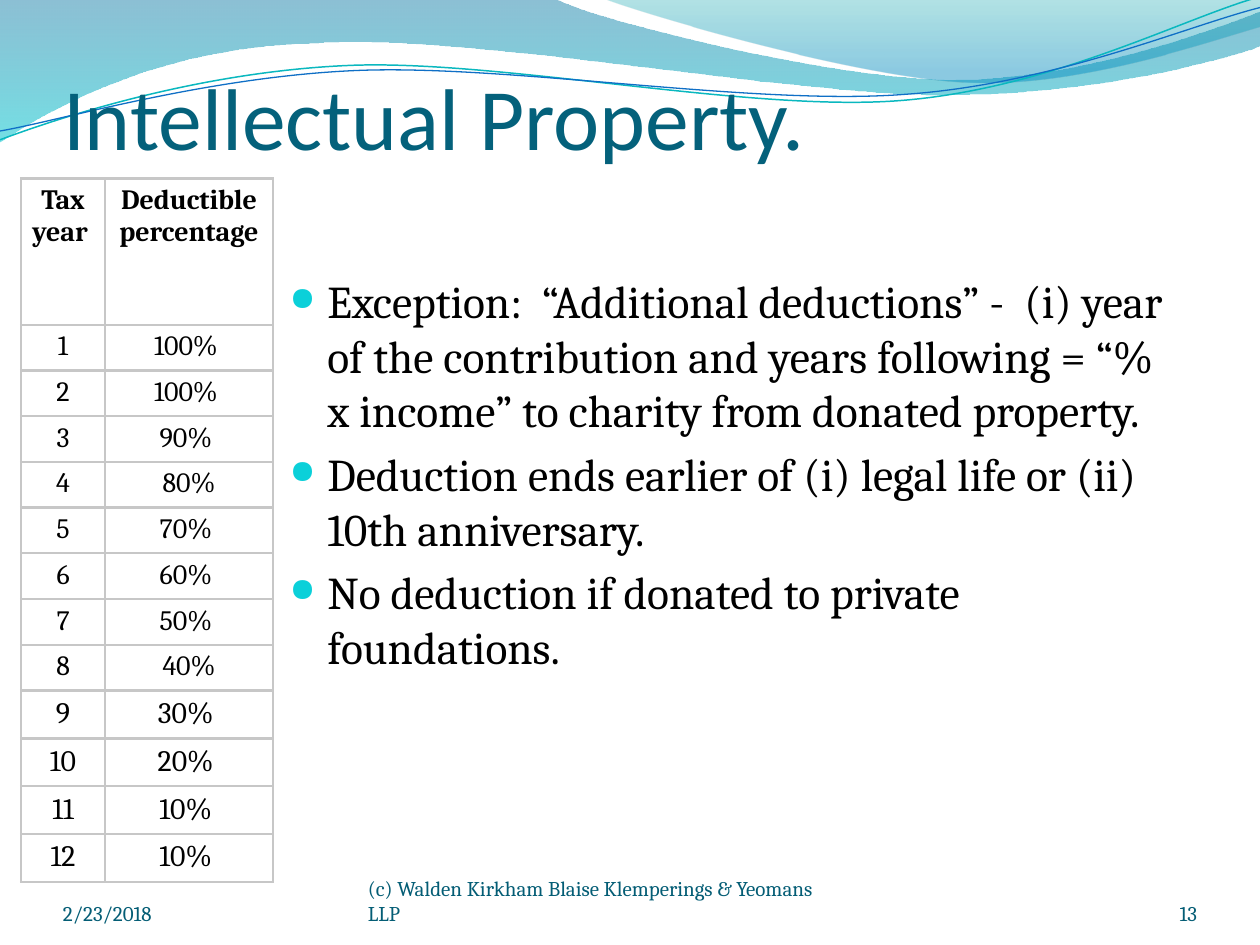
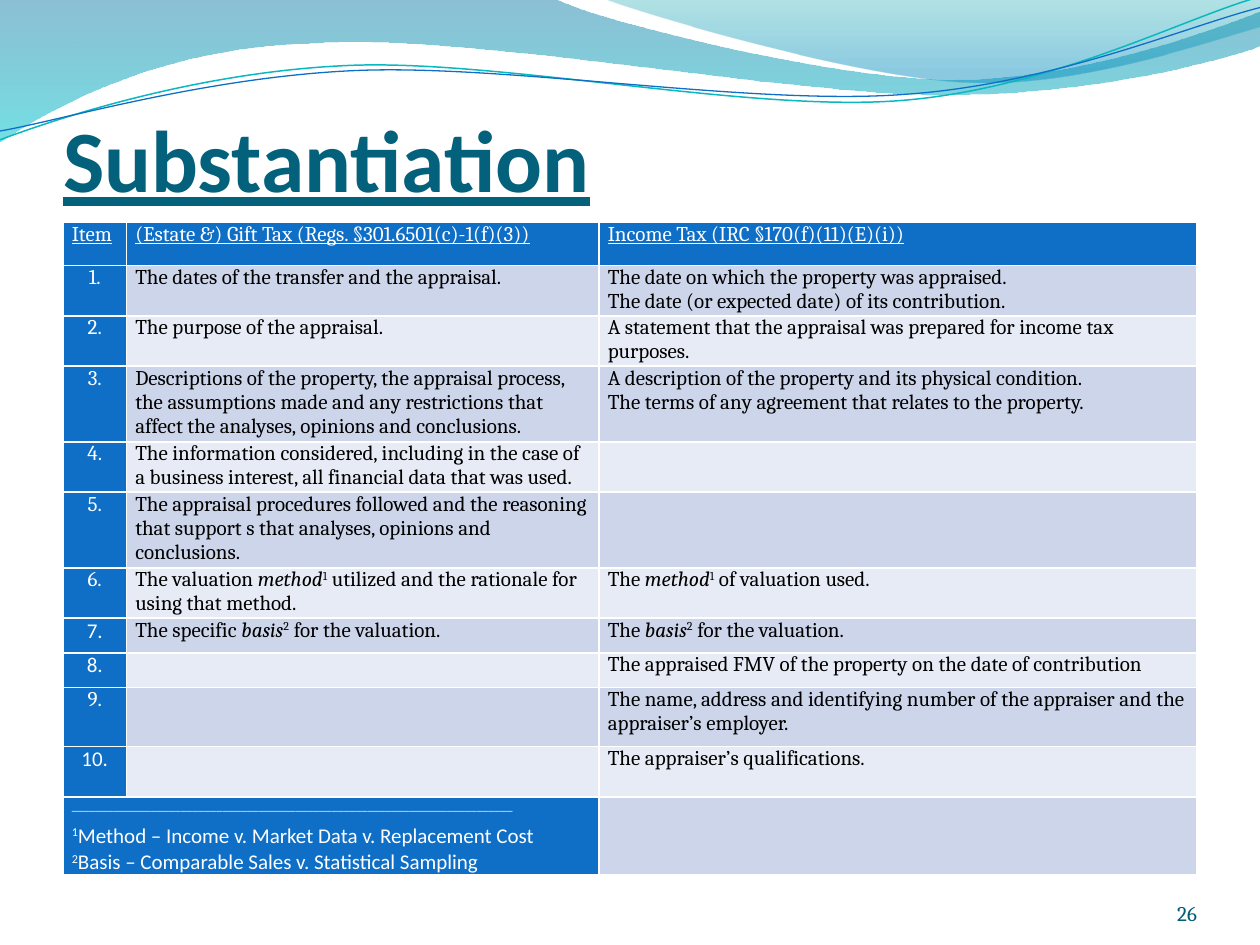
from dataclasses import dataclass, replace
from typing import NamedTuple

from lxml.etree import SubElement
from pptx import Presentation
from pptx.dml.color import RGBColor
from pptx.enum.text import MSO_ANCHOR as Anchor, MSO_AUTO_SIZE as AutoSize, PP_ALIGN as Align
from pptx.oxml import parse_xml
from pptx.oxml.ns import nsdecls, qn
from pptx.util import Emu, Inches, Pt

COLUMNS, ROWS = 100, 75
WIDTH, HEIGHT = Inches(10), Inches(7.5)
HEADING, BODY = "Calibri", "Cambria"
BLUE, BLACK, WHITE, GREY = "0F6FC6", "000000", "FFFFFF", "C7C7C7"
BANDS = ("E7EBF5", "CCD5EA")


@dataclass(frozen=True)
class Style:
    size: float
    color: str = BLACK
    font: str = BODY
    bold: bool = False
    underline: bool = False


class Box(NamedTuple):
    left: float
    top: float
    width: float
    height: float


class Span(NamedTuple):
    text: str
    italic: bool = False
    raised: bool = False


class Stop(NamedTuple):
    place: int
    color: str
    opacity: int


class Wave(NamedTuple):
    start: tuple
    segments: tuple
    stops: tuple = ()
    color: str = ""
    weight: float = 0


TITLE = Style(50, "04617B", HEADING)
FOOTER = Style(12, "045D75")
SMALL = Style(12)
LIGHT = Style(12, WHITE)
LIGHT_SANS = Style(12, WHITE, HEADING)

WAVES = (
    Wave((0, 0), (
        (44, -0.1), (47.6, 1.7, 66.4, 6.3, 75.8, 6.3), (85.3, 6.3, 95.8, 2.6, 100, 0.9),
        (100.1, 3.6), (98.3, 4.4, 87, 7.6, 74.6, 7.5), (62.2, 7.5, 38.2, 2.8, 25.7, 3.4),
        (12.9, 3.6, 4.6, 8.3, -0.1, 11.3), (0, 0)),
        stops=(Stop(0, "0074A1", 45), Stop(100, "00C6CF", 55))),
    Wave((47.9, -0.1), (
        (50.9, 1.1, 68.2, 6.2, 76.9, 6.5), (85.6, 6.9, 96.1, 3.2, 100, 2.1), (100, 0),
        (47.9, -0.1)),
        stops=(Stop(0, "00A1A9", 30), Stop(80, "008BBF", 45))),
    Wave((0, 11.1), (
        (4.8, 9.3, 15.8, 5.7, 27.7, 5.2), (39.5, 4.7, 59.3, 8.9, 71.3, 8),
        (83.3, 7.1, 93.8, 1.5, 99.8, -0.2)), color="0AB8BF", weight=0.85),
    Wave((0, 10.4), (
        (4.7, 9.6, 16.4, 6.1, 28.3, 5.6), (40.3, 5.1, 59.7, 8.4, 71.7, 7.5),
        (83.6, 6.7, 94.1, 2.1, 100, 0.6)), color=BLUE, weight=0.75),
)

DATE_BOX = Box(5, 69.5, 23.3, 4)
FIRM_BOX = Box(29.2, 69.5, 36.7, 4)
NUMBER_BOX = Box(86.7, 69.5, 8.3, 4)

DEDUCTIONS = ("100% ", "100% ", "90% ", "80%", "70% ", "60% ",
              "50% ", "40%", "30% ", "20% ", "10% ", "10% ")
EXCEPTIONS = (
    "Exception:  “Additional deductions” -  (i) year of the contribution and years following"
    " = “% x income” to charity from donated property.",
    "Deduction ends earlier of (i) legal life or (ii) 10th anniversary.",
    "No deduction if donated to private foundations.",
)

METHOD, BASIS = Span("method", italic=True), Span("basis", italic=True)
ONE, TWO = Span("1", raised=True), Span("2", raised=True)
ITEM_HEADS = ("Item", "(Estate &) Gift Tax (Regs. §301.6501(c)-1(f)(3))",
              "Income Tax (IRC §170(f)(11)(E)(i))")
REQUIREMENTS = (
    (["The dates of the transfer and the appraisal."],
     ["The date on which the property was appraised.",
      "The date (or expected date) of its contribution."]),
    (["The purpose of the appraisal."],
     ["A statement that the appraisal was prepared for income tax purposes."]),
    (["Descriptions of the property, the appraisal process, the assumptions made and any"
      " restrictions that affect the analyses, opinions and conclusions."],
     ["A description of the property and its physical condition.",
      "The terms of any agreement that relates to the property."]),
    (["The information considered, including in the case of a business interest, all financial"
      " data that was used."], []),
    (["The appraisal procedures followed and the reasoning that support s that analyses,"
      " opinions and conclusions."], []),
    ([("The valuation ", METHOD, ONE, " utilized and the rationale for using that method.")],
     [("The ", METHOD, ONE, " of valuation used.")]),
    ([("The specific ", BASIS, TWO, " for the valuation.")],
     [("The ", BASIS, TWO, " for the valuation.")]),
    ([], ["The appraised FMV of the property on the date of contribution"]),
    ([], ["The name, address and identifying number of the appraiser and the appraiser’s"
          " employer."]),
    ([], ["The appraiser’s qualifications."]),
)
SANS_ITEMS = (7, 8, 10)
FOOTNOTES = [
    (Span("_" * 73, raised=True),),
    (ONE, "Method – Income v. Market Data v. Replacement Cost"),
    (TWO, "Basis – Comparable Sales v. Statistical Sampling"),
]


def across(columns: float) -> Emu:
    return Emu(round(WIDTH * columns / COLUMNS))


def down(rows: float) -> Emu:
    return Emu(round(HEIGHT * rows / ROWS))


def place(box: Box) -> tuple:
    return across(box.left), down(box.top), across(box.width), down(box.height)


def rgb(color: str) -> RGBColor:
    return RGBColor.from_string(color)


def format_run(run, style: Style) -> None:
    font = run.font
    font.name, font.size, font.bold = style.font, Pt(style.size), style.bold
    font.underline = style.underline
    font.color.rgb = rgb(style.color)


def write(frame, paragraphs, style: Style, align=Align.LEFT) -> None:
    for index, content in enumerate(paragraphs):
        para = frame.add_paragraph() if index else frame.paragraphs[0]
        para.alignment = align
        for part in (content,) if isinstance(content, str) else content:
            span = Span(part) if isinstance(part, str) else part
            run = para.add_run()
            run.text = span.text
            format_run(run, style)
            run.font.italic = span.italic
            if span.raised:
                run.font._element.set("baseline", "30000")


def set_margins(holder, left: float, top: float, right: float, bottom: float) -> None:
    holder.margin_left, holder.margin_right = across(left), across(right)
    holder.margin_top, holder.margin_bottom = down(top), down(bottom)


def add_title(page, text: str, box: Box, style: Style) -> None:
    title = page.shapes.title
    title.left, title.top, title.width, title.height = place(box)
    frame = title.text_frame
    frame.auto_size, frame.vertical_anchor = AutoSize.NONE, Anchor.BOTTOM
    set_margins(frame, 0, 0.5, 0, 0)
    write(frame, [text], style)


def add_footer(page, text: str, box: Box, align=Align.LEFT) -> None:
    frame = page.shapes.add_textbox(*place(box)).text_frame
    frame.word_wrap, frame.vertical_anchor = True, Anchor.BOTTOM
    set_margins(frame, 0, 0, 0, 0)
    write(frame, [text], FOOTER, align)


def bend_segments(shape, segments: tuple) -> None:
    lines = iter(list(shape._element.iter(qn("a:lnTo"))))
    for segment in segments:
        first = next(lines)
        if len(segment) == 6:
            first.tag = qn("a:cubicBezTo")
            for _ in range(2):
                spare = next(lines)
                first.append(spare[0])
                spare.getparent().remove(spare)


def gradient(stops: tuple):
    marks = "".join(
        f'<a:gs pos="{stop.place * 1000}"><a:srgbClr val="{stop.color}">'
        f'<a:alpha val="{stop.opacity * 1000}"/></a:srgbClr></a:gs>' for stop in stops)
    return parse_xml(f'<a:gradFill {nsdecls("a")} rotWithShape="1"><a:gsLst>{marks}</a:gsLst>'
                     '<a:lin ang="5400000" scaled="0"/></a:gradFill>')


def add_waves_to_layout(page) -> None:
    for number, wave in enumerate(WAVES):
        knots = [(across(x), down(y)) for segment in wave.segments
                 for x, y in zip(segment[::2], segment[1::2])]
        builder = page.shapes.build_freeform(across(wave.start[0]), down(wave.start[1]))
        builder.add_line_segments(knots, close=bool(wave.stops))
        shape = builder.convert_to_shape()
        bend_segments(shape, wave.segments)
        shape.shadow.inherit = False
        shape.fill.background()
        if wave.stops:
            shape.line.fill.background()
            properties = shape._element.spPr
            properties.replace(properties.find(qn("a:noFill")), gradient(wave.stops))
        else:
            shape.line.color.rgb = rgb(wave.color)
            shape.line.width = Pt(wave.weight)
        shape._element.nvSpPr.cNvPr.set("id", str(100 + number))
        page.slide_layout.shapes._spTree.append(shape._element)


def add_grid(page, box: Box, widths: list, heights: list, border: str, weight: float):
    frame = page.shapes.add_table(len(heights), len(widths), *place(box))
    table = frame.table
    table.first_row = table.horz_banding = False
    for column, width in zip(table.columns, widths):
        column.width = across(width)
    for row, height in zip(table.rows, heights):
        row.height = down(height)
    for cell in table.iter_cells():
        for side in ("lnL", "lnR", "lnT", "lnB"):
            line = SubElement(cell._tc.get_or_add_tcPr(), qn(f"a:{side}"), w=str(Pt(weight)))
            SubElement(SubElement(line, qn("a:solidFill")), qn("a:srgbClr"), val=border)
    return table


def fill_cell(cell, paragraphs, style: Style, align=Align.LEFT, fill: str = "",
              margins=(0.7, 0, 0.7, 0)) -> None:
    set_margins(cell, *margins)
    if fill:
        cell.fill.solid()
        cell.fill.fore_color.rgb = rgb(fill)
    else:
        cell.fill.background()
    write(cell.text_frame, paragraphs, style, align)
    if not paragraphs:
        mark = cell.text_frame.paragraphs[0]._p.get_or_add_endParaRPr()
        mark.set("sz", str(round(style.size * 100)))


def add_bullets(page, box: Box, texts: tuple, style: Style) -> None:
    frame = page.shapes.add_textbox(*place(box)).text_frame
    frame.word_wrap = True
    write(frame, texts, style)
    for para in frame.paragraphs:
        para.space_before = Pt(style.size * 0.2)
        properties = para._p.get_or_add_pPr()
        properties.set("marL", str(across(20)))
        properties.set("indent", str(-across(3)))
        color = SubElement(properties, qn("a:buClr"))
        SubElement(color, qn("a:srgbClr"), val="0BD0D9")
        SubElement(properties, qn("a:buSzPct"), val="72000")
        SubElement(properties, qn("a:buChar"), char="●")


def build_intellectual_property(page) -> None:
    add_title(page, "Intellectual Property.", Box(5, 3.3, 90, 10), TITLE)
    add_bullets(page, Box(5, 21.2, 90, 48), EXCEPTIONS, Style(26))
    add_footer(page, "2/23/2018", DATE_BOX)
    add_footer(page, "(c) Walden Kirkham Blaise Klemperings & Yeomans LLP", FIRM_BOX)
    add_footer(page, "13", NUMBER_BOX, Align.RIGHT)
    heights = [11.6] + [3.63] * 8 + [3.8] * 4
    table = add_grid(page, Box(1.67, 14.17, 20, 56), [6.67, 13.33], heights, GREY, 1.5)
    rows = [("Tax year ", "Deductible percentage")]
    rows += [(str(year), share) for year, share in enumerate(DEDUCTIONS, 1)]
    for index, row in enumerate(rows):
        style = Style(17 if index > 8 else 16, bold=index == 0)
        for column, text in enumerate(row):
            fill_cell(table.cell(index, column), [text], style, Align.CENTER,
                      margins=(0.48, 0.47, 0.48, 0.47))


def build_substantiation(page) -> None:
    add_title(page, "Substantiation", Box(5, 7.7, 90, 9),
              replace(TITLE, bold=True, underline=True))
    heights = [3.4, 4, 4, 6, 4, 6, 4, 2.75, 2.75, 4.7, 4, 5.5]
    table = add_grid(page, Box(5, 17.67, 90, 55.8), [5.04, 37.5, 47.46], heights, WHITE, 1)
    for column, head in enumerate(ITEM_HEADS):
        cell = table.cell(0, column)
        fill_cell(cell, [head], replace(LIGHT, underline=True), fill=BLUE)
        cell.text_frame.paragraphs[0].space_after = Pt(6)
    for item, texts in enumerate(REQUIREMENTS, 1):
        number_style = LIGHT_SANS if item in SANS_ITEMS else LIGHT
        fill_cell(table.cell(item, 0), [f"{item}."], number_style, Align.CENTER, BLUE)
        for column, paragraphs in enumerate(texts, 1):
            fill_cell(table.cell(item, column), paragraphs, SMALL, fill=BANDS[item % 2])
    last = len(heights) - 1
    notes = table.cell(last, 0)
    notes.merge(table.cell(last, 1))
    fill_cell(notes, FOOTNOTES, LIGHT_SANS, fill=BLUE)
    for para in notes.text_frame.paragraphs:
        para.space_before = Pt(3)
    for para in notes.text_frame.paragraphs[1:]:
        para.line_spacing = Pt(12)
    fill_cell(table.cell(last, 2), [], SMALL, fill=BANDS[last % 2])
    add_footer(page, "26", NUMBER_BOX, Align.RIGHT)


def main() -> None:
    deck = Presentation()
    deck.slide_width, deck.slide_height = WIDTH, HEIGHT
    title_only = deck.slide_layouts[5]
    pages = [deck.slides.add_slide(title_only) for _ in range(2)]
    add_waves_to_layout(pages[0])
    build_intellectual_property(pages[0])
    build_substantiation(pages[1])
    deck.save("out.pptx")


if __name__ == "__main__":
    main()
